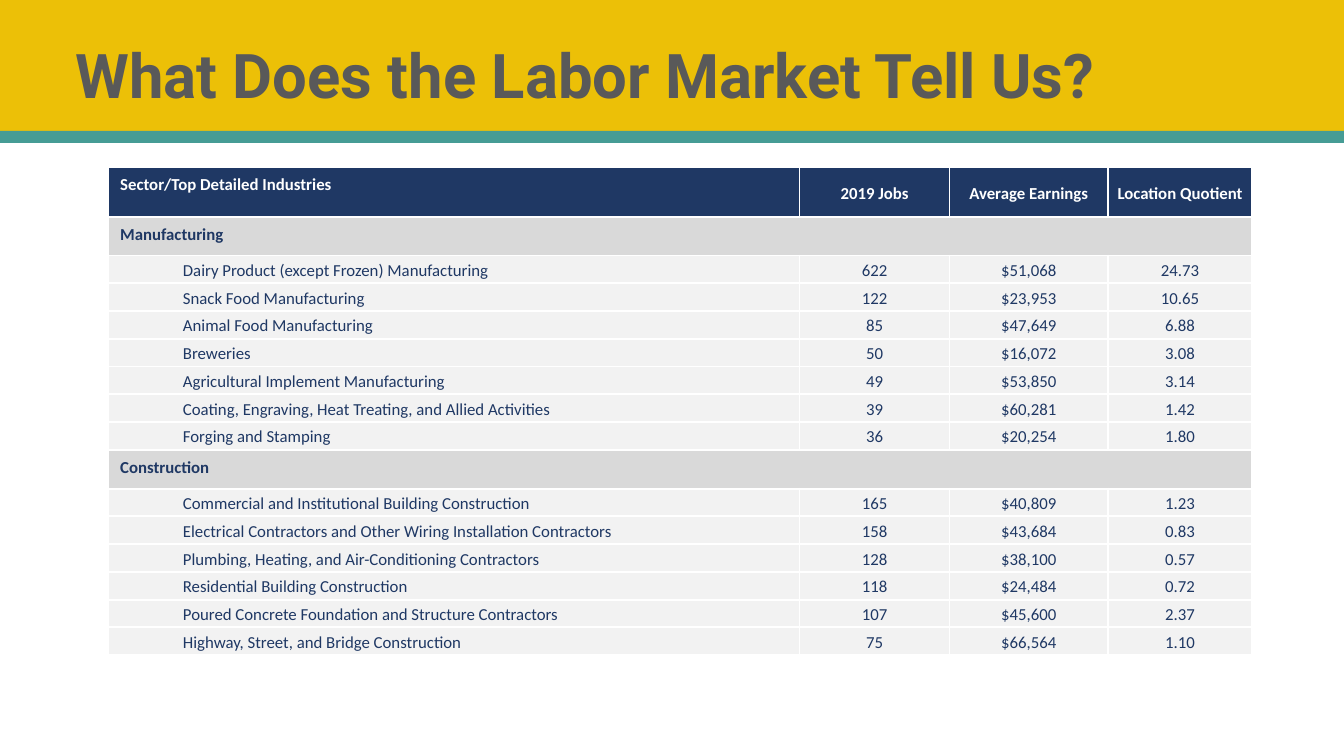
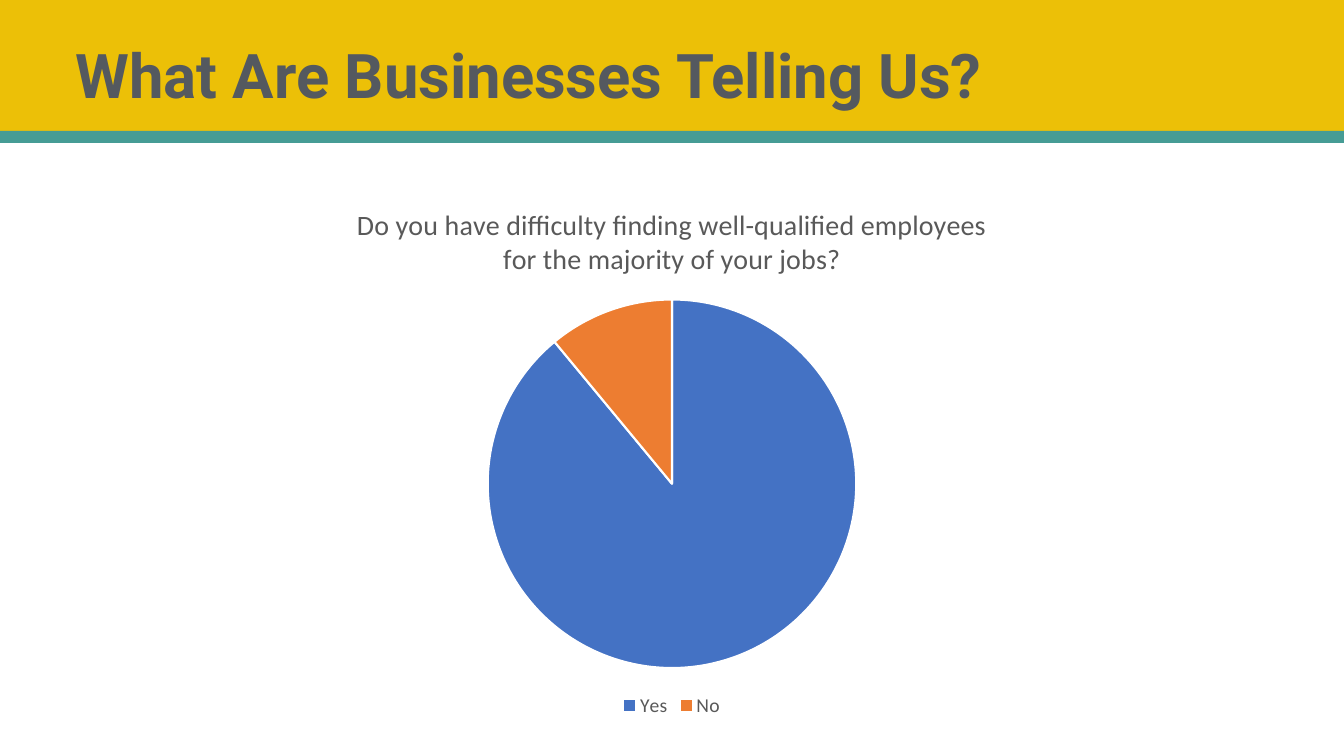
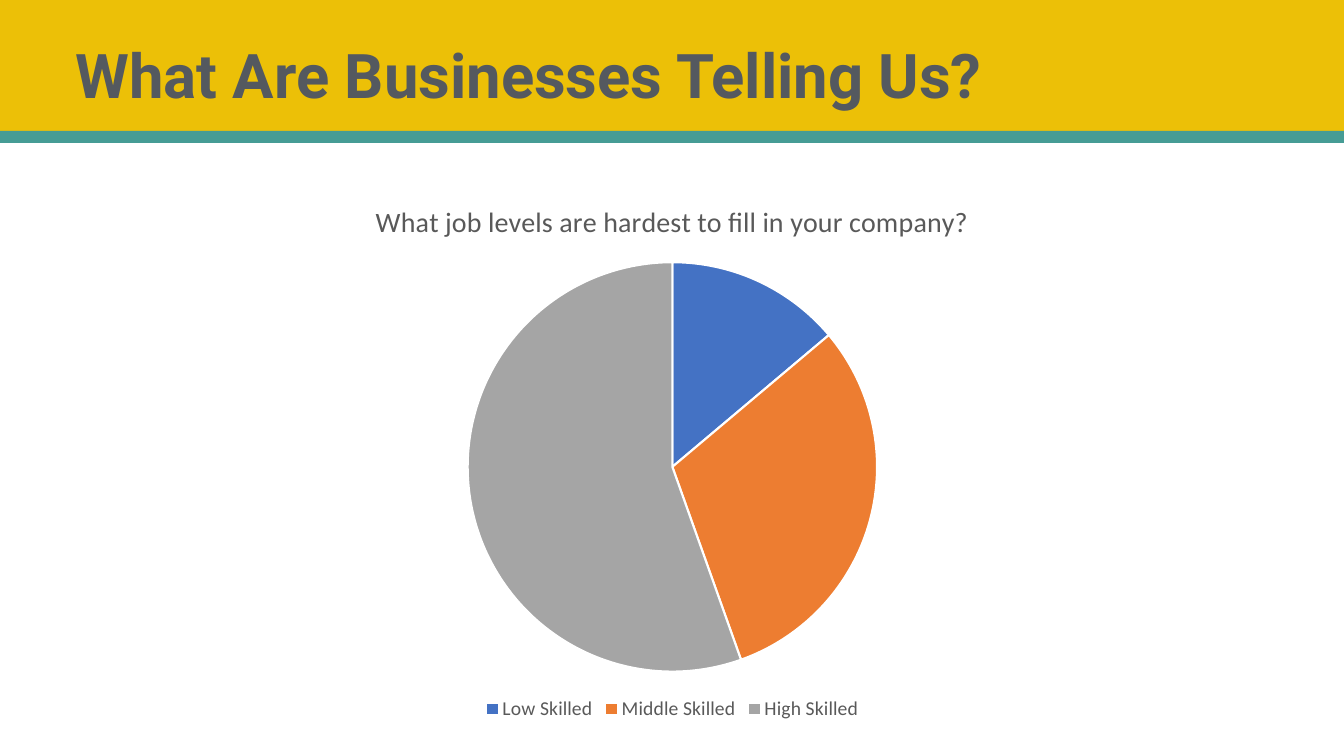
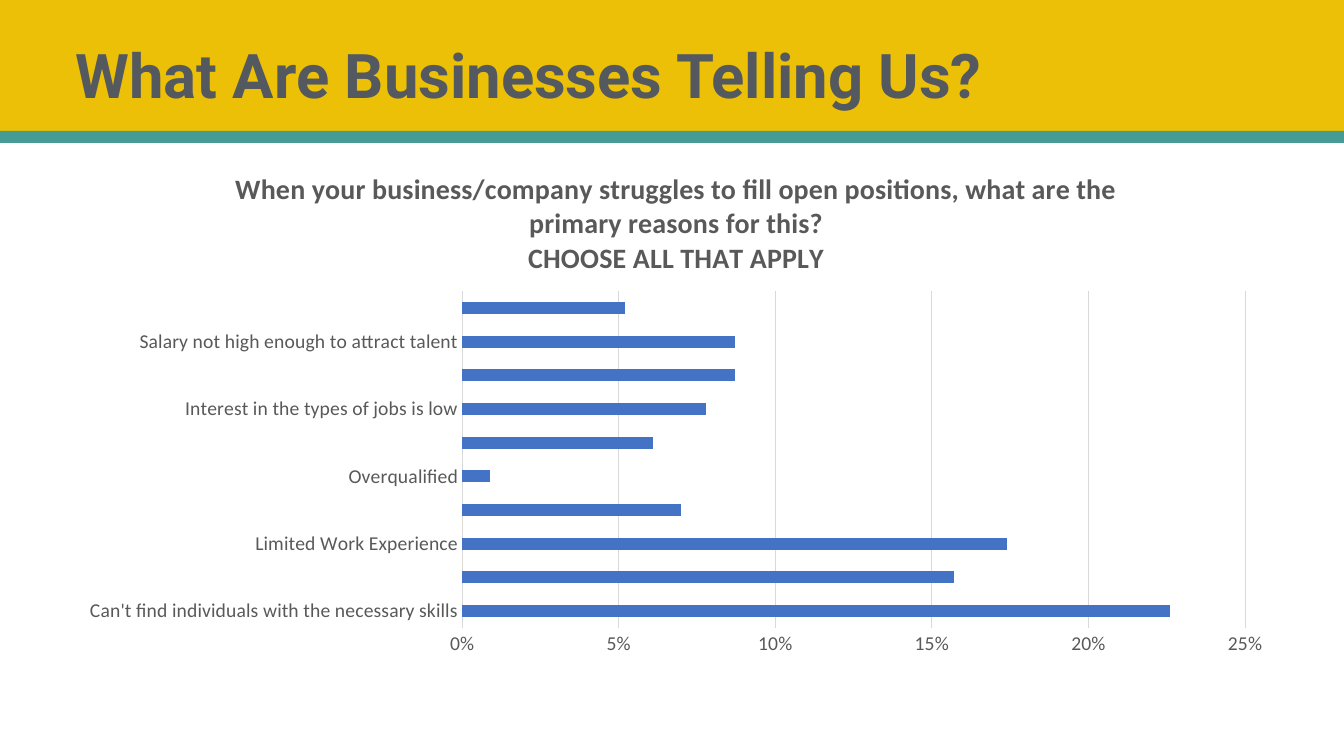
"""Build four slides on the labor market and on what businesses report."""
from lxml import etree
from pptx import Presentation, util as u
from pptx.chart.data import CategoryChartData
from pptx.dml.color import RGBColor
from pptx.enum import chart as charts, shapes, text
from pptx.oxml.ns import qn

GOLD = RGBColor(0xEC, 0xC0, 0x07)
TEAL = RGBColor(0x46, 0x9C, 0x95)
WHITE = RGBColor(0xFF, 0xFF, 0xFF)
NAVY = RGBColor(0x1F, 0x38, 0x64)
SECTION_GRAY = RGBColor(0xD9, 0xD9, 0xD9)
ROW_GRAY = RGBColor(0xF2, 0xF2, 0xF2)
TEXT_GRAY = RGBColor(0x59, 0x59, 0x59)
SLATE = RGBColor(0x54, 0x59, 0x5F)
BLUE = RGBColor(0x44, 0x72, 0xC4)
ORANGE = RGBColor(0xED, 0x7D, 0x31)
GRAY = RGBColor(0xA5, 0xA5, 0xA5)

HEADER = ["Sector/Top Detailed Industries", "", "2019 Jobs", "Average Earnings", "Location Quotient"]
SECTIONS = {
    "Manufacturing": [
        ("Dairy Product (except Frozen) Manufacturing", "622", "$51,068", "24.73"),
        ("Snack Food Manufacturing", "122", "$23,953", "10.65"),
        ("Animal Food Manufacturing", "85", "$47,649", "6.88"),
        ("Breweries", "50", "$16,072", "3.08"),
        ("Agricultural Implement Manufacturing", "49", "$53,850", "3.14"),
        ("Coating, Engraving, Heat Treating, and Allied Activities", "39", "$60,281", "1.42"),
        ("Forging and Stamping", "36", "$20,254", "1.80"),
    ],
    "Construction": [
        ("Commercial and Institutional Building Construction", "165", "$40,809", "1.23"),
        ("Electrical Contractors and Other Wiring Installation Contractors", "158", "$43,684", "0.83"),
        ("Plumbing, Heating, and Air-Conditioning Contractors", "128", "$38,100", "0.57"),
        ("Residential Building Construction", "118", "$24,484", "0.72"),
        ("Poured Concrete Foundation and Structure Contractors", "107", "$45,600", "2.37"),
        ("Highway, Street, and Bridge Construction", "75", "$66,564", "1.10"),
    ],
}
PIES = [
    ("Do you have difficulty finding well-qualified employees for the majority of your jobs?",
     [("Yes", 89), ("No", 11)], (6.32, 4.62, 21.23, 13.56)),
    ("What job levels are hardest to fill in your company?",
     [("Low Skilled", 14), ("Middle Skilled", 31), ("High Skilled", 56)], (7.04, 4.55, 19.81, 13.72)),
]
REASONS = [
    ("Can't find individuals with the necessary skills", 0.226),
    ("", 0.157),
    ("Limited Work Experience", 0.174),
    ("", 0.07),
    ("Overqualified", 0.009),
    ("", 0.061),
    ("Interest in the types of jobs is low", 0.078),
    ("", 0.087),
    ("Salary not high enough to attract talent", 0.087),
    ("", 0.052),
]

presentation = Presentation()
presentation.slide_width = u.Cm(33.87)
presentation.slide_height = u.Cm(19.05)


def add_titled_slide(title, color):
    slide = presentation.slides.add_slide(presentation.slide_layouts[6])
    for top, height, fill in ((0, 3.58, GOLD), (3.3, 0.3, TEAL)):
        band = slide.shapes.add_shape(
            shapes.MSO_SHAPE.RECTANGLE, 0, u.Cm(top), presentation.slide_width, u.Cm(height))
        band.shadow.inherit = False
        band.fill.solid()
        band.fill.fore_color.rgb = fill
        band.line.fill.background()
    frame = slide.shapes.add_textbox(u.Cm(1.65), u.Cm(0.13), u.Cm(29.21), u.Cm(3.68)).text_frame
    frame.word_wrap = True
    frame.vertical_anchor = text.MSO_ANCHOR.MIDDLE
    paragraph = frame.paragraphs[0]
    paragraph.text = title
    paragraph.line_spacing = 0.9
    font = paragraph.font
    font.name, font.size, font.bold, font.color.rgb = "Roboto", u.Pt(44), True, color
    return slide


def add_titled_chart(slide, kind, values, box, title, bold):
    data = CategoryChartData()
    data.categories = [label for label, value in values]
    data.add_series("Series 1", [value for label, value in values])
    chart = slide.shapes.add_chart(kind, *map(u.Cm, box), data).chart
    chart.font.name, chart.font.size, chart.font.color.rgb = "Calibri", u.Pt(14), TEXT_GRAY
    frame = chart.chart_title.text_frame
    frame.text = title
    for paragraph in frame.paragraphs:
        font = paragraph.font
        font.name, font.size, font.bold, font.color.rgb = "Calibri", u.Pt(20), bold, TEXT_GRAY
    chart.chart_title.include_in_layout = False
    return chart


slide = add_titled_slide("What Does the Labor Market Tell Us?", TEXT_GRAY)
rows = [HEADER]
for section, industries in SECTIONS.items():
    rows.append([section, "", "", "", ""])
    rows.extend(["", *industry] for industry in industries)
table = slide.shapes.add_table(
    len(rows), len(HEADER), u.Cm(2.73), u.Cm(4.22), u.Cm(28.83), u.Cm(12.34)).table
for column, width in zip(table.columns, (1.65, 15.77, 3.78, 3.99, 3.64)):
    column.width = u.Cm(width)
for row_index, row in enumerate(rows):
    is_header, is_section = row_index == 0, row[0] in SECTIONS
    table.rows[row_index].height = u.Cm(1.24 if is_header else 0.98 if is_section else 0.7)
    for column_index, value in enumerate(row):
        cell = table.cell(row_index, column_index)
        is_heading = column_index == 0 and value != ""
        cell.margin_left = cell.margin_right = u.Cm(0.3 if is_heading else 0.23)
        cell.margin_top = u.Cm(0.15 if is_heading else 0.03)
        cell.margin_bottom = u.Cm(0.15 if is_heading else 0)
        cell.vertical_anchor = text.MSO_ANCHOR.TOP if is_heading else text.MSO_ANCHOR.MIDDLE
        paragraph = cell.text_frame.paragraphs[0]
        paragraph.text = value
        paragraph.line_spacing = 1.07
        paragraph.alignment = text.PP_ALIGN.CENTER if column_index > 1 else text.PP_ALIGN.LEFT
        font = paragraph.font
        font.name, font.size, font.bold = "Calibri", u.Pt(12), is_header or is_section
        font.color.rgb = WHITE if is_header else NAVY
        open_side = None
        if not is_header and not is_section:
            open_side = {0: "lnR", 1: "lnL"}.get(column_index)
        properties = cell._tc.get_or_add_tcPr()
        for side in ("lnL", "lnR", "lnT", "lnB"):
            border = etree.SubElement(properties, qn("a:" + side), w=str(u.Pt(1.5)))
            if side == open_side:
                etree.SubElement(border, qn("a:noFill"))
            else:
                fill = etree.SubElement(border, qn("a:solidFill"))
                etree.SubElement(fill, qn("a:srgbClr"), val=str(WHITE))
        cell.fill.solid()
        cell.fill.fore_color.rgb = NAVY if is_header else SECTION_GRAY if is_section else ROW_GRAY
    if is_header or is_section:
        table.cell(row_index, 0).merge(table.cell(row_index, 1 if is_header else 4))

for question, answers, box in PIES:
    slide = add_titled_slide("What Are Businesses Telling Us?", SLATE)
    chart = add_titled_chart(slide, charts.XL_CHART_TYPE.PIE, answers, box, question, False)
    chart.has_legend = True
    chart.legend.position = charts.XL_LEGEND_POSITION.BOTTOM
    chart.legend.include_in_layout = False
    plot = chart.plots[0]
    plot.vary_by_categories = True
    for index, color in zip(range(len(answers)), (BLUE, ORANGE, GRAY)):
        point = plot.series[0].points[index]
        point.format.fill.solid()
        point.format.fill.fore_color.rgb = color
        point.format.line.color.rgb = WHITE
        point.format.line.width = u.Pt(1.5)

slide = add_titled_slide("What Are Businesses Telling Us?", SLATE)
chart = add_titled_chart(
    slide, charts.XL_CHART_TYPE.BAR_CLUSTERED, REASONS, (1.65, 3.81, 30.78, 12.98),
    "When your business/company struggles to fill open positions, what are the primary reasons"
    " for this?\nCHOOSE ALL THAT APPLY", True)
chart.has_legend = False
plot = chart.plots[0]
plot.vary_by_categories = False
plot.gap_width = 182
plot.series[0].format.fill.solid()
plot.series[0].format.fill.fore_color.rgb = BLUE
for axis in (chart.category_axis, chart.value_axis):
    axis.major_tick_mark = axis.minor_tick_mark = charts.XL_TICK_MARK.NONE
chart.category_axis.format.line.color.rgb = SECTION_GRAY
chart.category_axis.format.line.width = u.Pt(0.75)
axis = chart.value_axis
axis.format.line.fill.background()
axis.major_gridlines.format.line.color.rgb = SECTION_GRAY
axis.major_gridlines.format.line.width = u.Pt(0.75)
axis.tick_labels.number_format = "0%"
axis.tick_labels.number_format_is_linked = False

presentation.save("out.pptx")
